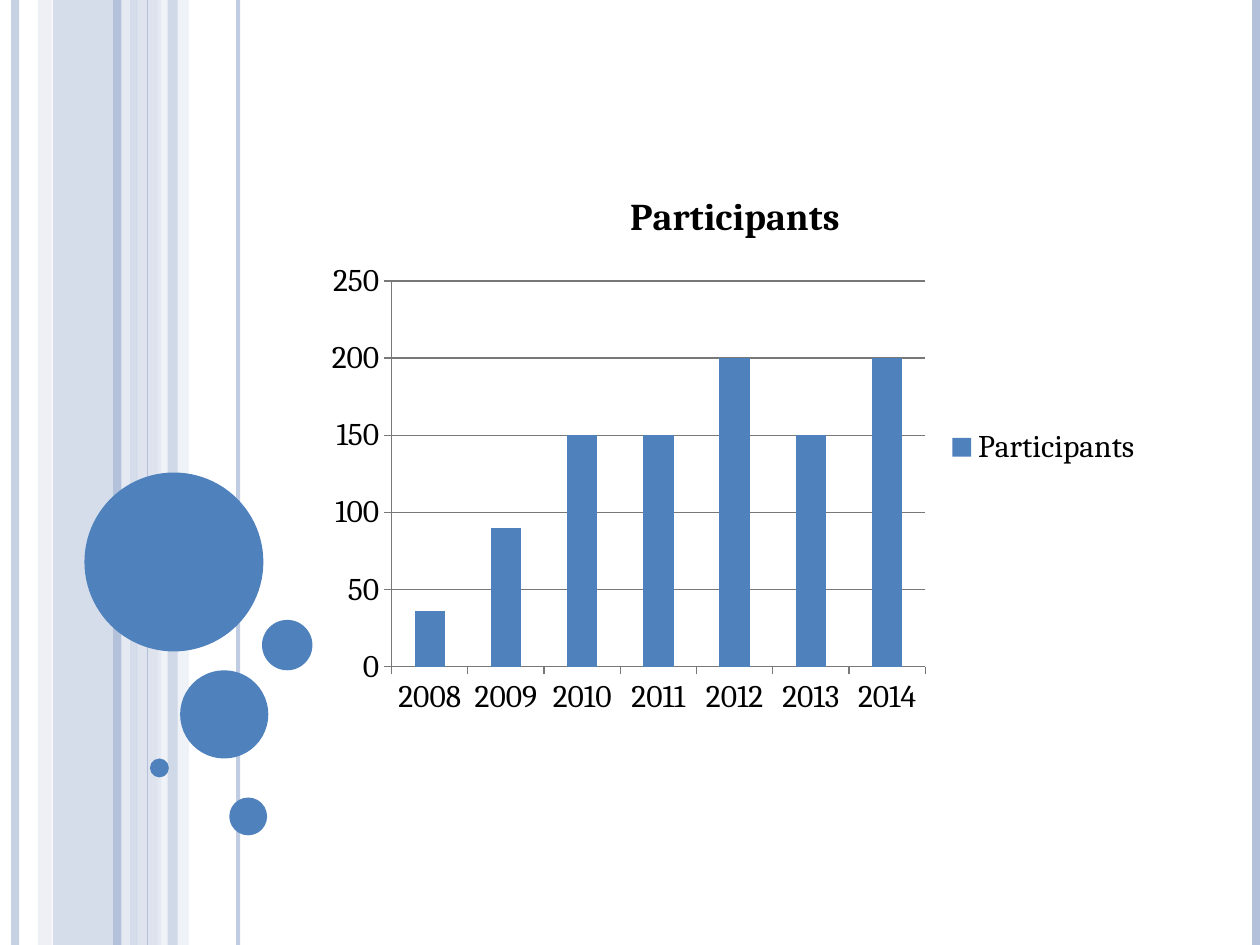
from typing import NamedTuple

from lxml import etree
from pptx import Presentation
from pptx.chart.data import CategoryChartData
from pptx.dml.color import RGBColor
from pptx.enum.chart import XL_CHART_TYPE, XL_LEGEND_POSITION, XL_TICK_MARK
from pptx.enum.shapes import MSO_CONNECTOR, MSO_SHAPE
from pptx.oxml.ns import qn
from pptx.util import Inches, Pt

RECTANGLE = MSO_SHAPE.RECTANGLE
OVAL = MSO_SHAPE.OVAL
STRAIGHT = MSO_CONNECTOR.STRAIGHT
COLUMNS = XL_CHART_TYPE.COLUMN_CLUSTERED
LEGEND_RIGHT = XL_LEGEND_POSITION.RIGHT
TICK_OUTSIDE = XL_TICK_MARK.OUTSIDE

FONT = "Cambria"
BLUE, MID, LIGHT, PALE = "4F81BD", "B3C1DB", "D0D8E8", "E9EDF4"
BLACK, GRAY = "000000", "787878"
SLIDE_WIDTH, SLIDE_HEIGHT = 10, 7.5


class Band(NamedTuple):
    left: float
    width: float
    color: str
    opacity: int


class Stripe(NamedTuple):
    x: float
    weight: float
    color: str
    opacity: int = 100


class Bubble(NamedTuple):
    left: float
    top: float
    diameter: float


BANDS = [
    Band(0.42, 0.67, MID, 54),
    Band(0.3, 0.11, LIGHT, 36),
    Band(1.08, 0.2, LIGHT, 70),
    Band(1.25, 0.25, PALE, 71),
]
STRIPES = [
    Stripe(0.12, 4.5, MID, 73),
    Stripe(1, 4.5, PALE, 83),
    Stripe(0.93, 4.5, MID),
    Stripe(1.89, 2.25, MID, 82),
    Stripe(1.17, 0.75, MID),
    Stripe(9.97, 4.5, MID),
]
FRONT_BAND = Band(1.33, 0.08, MID, 51)
BUBBLES = [
    Bubble(0.67, 3.75, 1.42),
    Bubble(1.43, 5.32, 0.7),
    Bubble(1.19, 6.02, 0.15),
    Bubble(1.82, 6.33, 0.3),
    Bubble(2.08, 4.92, 0.4),
]
PARTICIPANTS = {
    "2008": 36, "2009": 90, "2010": 150, "2011": 150,
    "2012": 200, "2013": 150, "2014": 200,
}


def paint(fill, color: str, opacity: int = 100) -> None:
    fill.solid()
    fill.fore_color.rgb = RGBColor.from_string(color)
    if opacity < 100:
        # The public API has no transparency setting
        for srgb in fill._xPr.iter(qn("a:srgbClr")):
            etree.SubElement(srgb, qn("a:alpha"), val=str(opacity * 1000))


def add_filled(slide, preset, left: float, top: float, width: float,
               height: float, color: str, opacity: int = 100) -> None:
    shape = slide.shapes.add_shape(
        preset, Inches(left), Inches(top), Inches(width), Inches(height))
    shape.shadow.inherit = False
    shape.line.fill.background()
    paint(shape.fill, color, opacity)


def add_band(slide, band: Band) -> None:
    add_filled(slide, RECTANGLE, band.left, 0, band.width, SLIDE_HEIGHT,
               band.color, band.opacity)


def add_stripe(slide, stripe: Stripe) -> None:
    line = slide.shapes.add_connector(
        STRAIGHT, Inches(stripe.x), 0, Inches(stripe.x), Inches(SLIDE_HEIGHT))
    line.line.width = Pt(stripe.weight)
    paint(line.line.fill, stripe.color, stripe.opacity)
    etree.SubElement(line._element.spPr, qn("a:effectLst"))


def add_bubble(slide, bubble: Bubble) -> None:
    add_filled(slide, OVAL, bubble.left, bubble.top, bubble.diameter,
               bubble.diameter, BLUE)


def style_line(line) -> None:
    line.width = Pt(0.75)
    paint(line.fill, GRAY)


def add_participants_chart(slide) -> None:
    data = CategoryChartData()
    data.categories = list(PARTICIPANTS)
    data.add_series("Participants", list(PARTICIPANTS.values()))
    chart = slide.shapes.add_chart(
        COLUMNS, Inches(2.5), Inches(1.33), Inches(6.67), Inches(4.44),
        data).chart
    chart.font.name = FONT
    chart.font.size = Pt(18)
    chart.font.color.rgb = RGBColor.from_string(BLACK)

    # Title and legend
    chart.has_title = True
    heading = chart.chart_title.text_frame
    heading.text = "Participants"
    title_font = heading.paragraphs[0].font
    title_font.name = FONT
    title_font.size = Pt(21.6)
    title_font.bold = True
    title_font.color.rgb = RGBColor.from_string(BLACK)
    chart.has_legend = True
    chart.legend.position = LEGEND_RIGHT
    chart.legend.include_in_layout = False

    # Axes
    for axis in (chart.category_axis, chart.value_axis):
        axis.major_tick_mark = TICK_OUTSIDE
        style_line(axis.format.line)
    years, counts = chart.category_axis, chart.value_axis
    years.has_major_gridlines = False
    counts.has_major_gridlines = True
    style_line(counts.major_gridlines.format.line)
    counts.minimum_scale, counts.maximum_scale = 0, 250
    counts.major_unit = 50

    # Columns
    plot = chart.plots[0]
    plot.gap_width = 150
    plot.vary_by_categories = False
    paint(plot.series[0].format.fill, BLUE)


def main() -> None:
    deck = Presentation()
    deck.slide_width = Inches(SLIDE_WIDTH)
    deck.slide_height = Inches(SLIDE_HEIGHT)
    slide = deck.slides.add_slide(deck.slide_layouts[6])

    # Striped side decoration
    for band in BANDS:
        add_band(slide, band)
    for stripe in STRIPES:
        add_stripe(slide, stripe)
    add_band(slide, FRONT_BAND)
    for bubble in BUBBLES:
        add_bubble(slide, bubble)

    # Content
    add_participants_chart(slide)
    deck.save("out.pptx")


if __name__ == "__main__":
    main()
